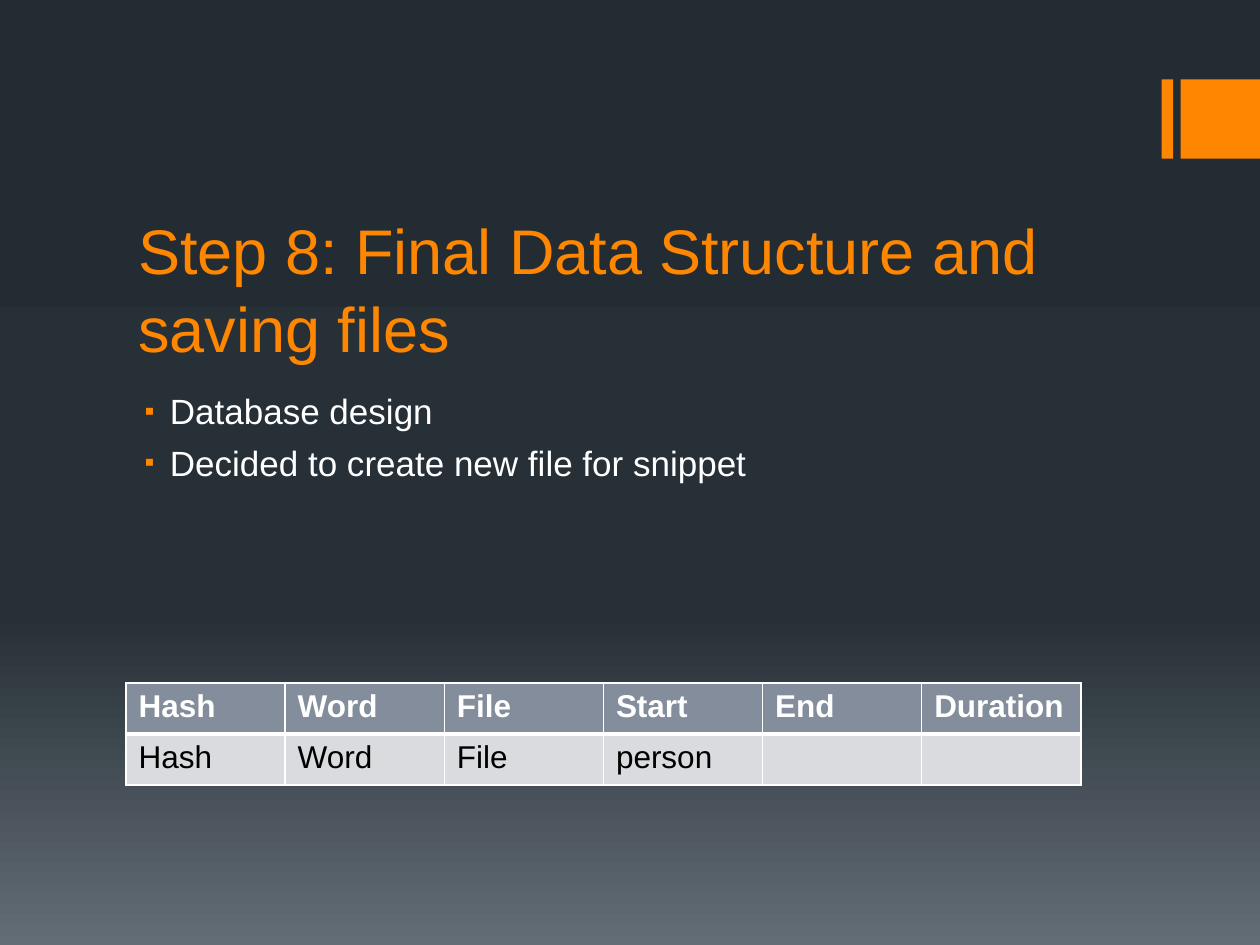
from copy import deepcopy
from lxml.etree import SubElement as Sub
from pptx import Presentation
from pptx.dml.color import RGBColor
from pptx.enum.shapes import MSO_SHAPE as Shape
from pptx.enum.text import MSO_ANCHOR as Anchor
from pptx.oxml.ns import qn
from pptx.util import Inches, Pt

ORANGE, WHITE, BLACK = "FF8600", "FFFFFF", "000000"


def rgb(code):
    return RGBColor.from_string(code)


def write(par, text, size=18, color=WHITE, bold=False, before=0, line=None):
    par.space_before = Pt(before)
    par.line_spacing = line
    run = par.add_run()
    run.text = text
    font = run.font
    font.name, font.size, font.bold = "Arial", Pt(size), bold
    font.color.rgb = rgb(color)


prs = Presentation()
prs.slide_width, prs.slide_height = Inches(10), Inches(7.5)
slide = prs.slides.add_slide(prs.slide_layouts[6])
shapes = slide.shapes

# Background: three-stop gradient from top to bottom
back = slide.background.fill
back.gradient()
back.gradient_angle = 270
stops = back._fill._gradFill.gsLst
stops.append(deepcopy(stops[-1]))
shades = [(0, "242C33"), (0.65, "273037"), (1, "636D76")]
for stop, (pos, code) in zip(back.gradient_stops, shades):
    stop.position = pos
    stop.color.rgb = rgb(code)

# Orange tab at the right edge
for left, width in [(9.22, 0.09), (9.37, 0.63)]:
    bar = shapes.add_shape(Shape.RECTANGLE, Inches(left), Inches(0.63),
                           Inches(width), Inches(0.63))
    bar.shadow.inherit = False
    bar.fill.solid()
    bar.fill.fore_color.rgb = rgb(ORANGE)
    bar.line.fill.background()

# Title
title = shapes.add_textbox(Inches(1), Inches(1.69), Inches(8), Inches(1.26)).text_frame
title.word_wrap = True
title.vertical_anchor = Anchor.BOTTOM
write(title.paragraphs[0], "Step 8: Final Data Structure and saving files",
      size=36, color=ORANGE, line=1.04)

# Bullet list
body = shapes.add_textbox(Inches(1), Inches(3.03), Inches(8), Inches(3.87)).text_frame
body.word_wrap = True
items = ["Database design", "Decided to create new file for snippet"]
for i, item in enumerate(items):
    par = body.add_paragraph() if i else body.paragraphs[0]
    write(par, item, size=20, before=4.5, line=1.04)
    props = par._p.get_or_add_pPr()
    props.set("marL", str(Inches(0.25)))
    props.set("indent", str(Inches(-0.2)))
    Sub(Sub(props, qn("a:buClr")), qn("a:srgbClr"), val=ORANGE)
    Sub(props, qn("a:buSzPct"), val="80000")
    Sub(props, qn("a:buFont"), typeface="Arial")
    Sub(props, qn("a:buChar"), char="▪")

# Table of the data structure
rows = [["Hash", "Word", "File", "Start", "End", "Duration"],
        ["Hash", "Word", "File", "person", "", ""]]
looks = [("838D9B", WHITE, True), ("D9DBDE", BLACK, False)]
table = shapes.add_table(2, 6, Inches(1), Inches(5.42),
                         Inches(7.58), Inches(0.81)).table
for r, (row, (fill, color, bold)) in enumerate(zip(rows, looks)):
    for c, text in enumerate(row):
        cell = table.cell(r, c)
        par = cell.text_frame.paragraphs[0]
        if text:
            write(par, text, color=color, bold=bold)
        else:
            par.font.size = Pt(18)
        # Borders come before the fill; a thick rule parts the two rows
        props = cell._tc.get_or_add_tcPr()
        thick = "B" if r == 0 else "T"
        for side in "LRTB":
            width = Pt(3 if side == thick else 1)
            edge = Sub(props, qn(f"a:ln{side}"), w=str(width))
            Sub(Sub(edge, qn("a:solidFill")), qn("a:srgbClr"), val=WHITE)
        cell.fill.solid()
        cell.fill.fore_color.rgb = rgb(fill)

prs.save("out.pptx")
